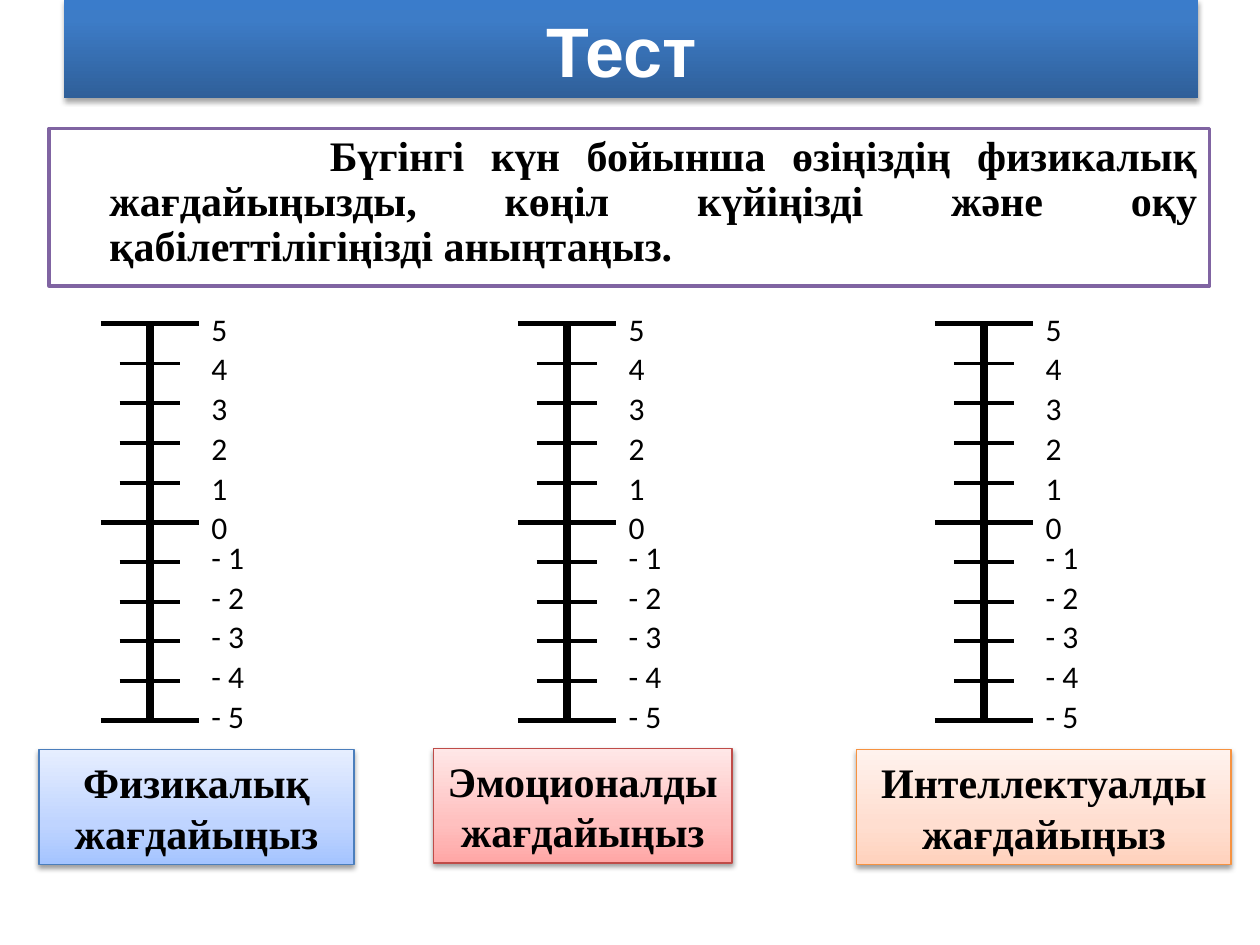
from lxml.etree import SubElement
from pptx import Presentation
from pptx.dml.color import RGBColor
from pptx.enum.shapes import MSO_CONNECTOR as CONNECTOR, MSO_SHAPE as SHAPE
from pptx.enum.text import MSO_ANCHOR as ANCHOR, MSO_AUTO_SIZE as AUTO_SIZE, PP_ALIGN as ALIGN
from pptx.oxml.ns import qn
from pptx.util import Inches, Pt

BLACK = RGBColor(0x00, 0x00, 0x00)
WHITE = RGBColor(0xFF, 0xFF, 0xFF)
PURPLE = RGBColor(0x80, 0x64, 0xA2)
BLUE = RGBColor(0x4B, 0x7E, 0xBC)
RED = RGBColor(0xBF, 0x4C, 0x48)
ORANGE = RGBColor(0xF6, 0x92, 0x40)
TITLE_STOPS = [(0, RGBColor(0x2F, 0x5F, 0x99)), (80, RGBColor(0x3D, 0x7C, 0xC7)),
               (100, RGBColor(0x3A, 0x7C, 0xCB))]
BLUE_STOPS = [(0, RGBColor(0xA4, 0xC4, 0xFF)), (35, RGBColor(0xBF, 0xD4, 0xFF)),
              (100, RGBColor(0xE6, 0xEE, 0xFF))]
RED_STOPS = [(0, RGBColor(0xFF, 0xA6, 0xA5)), (35, RGBColor(0xFF, 0xC0, 0xBF)),
             (100, RGBColor(0xFF, 0xE7, 0xE7))]
ORANGE_STOPS = [(0, RGBColor(0xFF, 0xD2, 0xBD)), (35, RGBColor(0xFF, 0xDE, 0xD0)),
                (100, RGBColor(0xFF, 0xF2, 0xED))]

SCALE_TOP = 2.57
SCALE_STEP = 0.315
SCALE_MAX = 5
SCALE_CENTERS = (1.19, 4.5, 7.81)

CAPTIONS = [
    (0.31, 5.95, 2.5, "Физикалық жағдайыңыз", BLUE, BLUE_STOPS),
    (6.8, 5.95, 2.97, "Интеллектуалды жағдайыңыз", ORANGE, ORANGE_STOPS),
    (3.44, 5.94, 2.37, "Эмоционалды\nжағдайыңыз", RED, RED_STOPS),
]


def fill_gradient(shape, stops):
    shape.fill.gradient()
    shape.fill.gradient_angle = 90
    stop_list = shape._element.spPr.find(qn("a:gradFill")).find(qn("a:gsLst"))
    for stop in list(stop_list):
        stop_list.remove(stop)
    for percent, color in stops:
        stop = SubElement(stop_list, qn("a:gs"), pos=str(percent * 1000))
        SubElement(stop, qn("a:srgbClr"), val=str(color))


def add_shadow(shape, opacity, distance):
    shape.shadow.inherit = False
    effects = shape._element.spPr.find(qn("a:effectLst"))
    shadow = SubElement(effects, qn("a:outerShdw"), blurRad=str(Pt(3.1)),
                        dist=str(Pt(distance)), dir="5400000", rotWithShape="0")
    color = SubElement(shadow, qn("a:srgbClr"), val=str(BLACK))
    SubElement(color, qn("a:alpha"), val=str(opacity * 1000))


def write_text(shape, text, font_name, size, color=BLACK, bold=False, align=ALIGN.LEFT):
    shape.text_frame.text = text
    for paragraph in shape.text_frame.paragraphs:
        paragraph.alignment = align
        for run in paragraph.runs:
            run.font.name = font_name
            run.font.size = Pt(size)
            run.font.bold = bold
            run.font.color.rgb = color


def add_title(slide):
    title = slide.shapes.title
    title.left, title.top = Inches(0.51), Inches(0)
    title.width, title.height = Inches(9), Inches(0.78)
    fill_gradient(title, TITLE_STOPS)
    add_shadow(title, 35, 1.8)
    write_text(title, "Тест ", "Arial", 40, WHITE, True, ALIGN.CENTER)
    title.text_frame.vertical_anchor = ANCHOR.MIDDLE


def add_instruction(slide):
    instruction = slide.shapes.add_shape(
        SHAPE.RECTANGLE, Inches(0.39), Inches(1.02), Inches(9.21), Inches(1.25))
    instruction.shadow.inherit = False
    instruction.fill.solid()
    instruction.fill.fore_color.rgb = WHITE
    instruction.line.color.rgb = PURPLE
    instruction.line.width = Pt(2)
    write_text(instruction, "Бүгінгі күн бойынша өзіңіздің физикалық жағдайыңызды, "
               "көңіл күйіңізді және оқу қабілеттілігіңізді аныңтаңыз.",
               "Times New Roman", 24, bold=True, align=ALIGN.JUSTIFY)
    instruction.text_frame.vertical_anchor = ANCHOR.TOP
    paragraph = instruction.text_frame.paragraphs[0]
    paragraph.line_spacing = 0.9
    properties = paragraph._p.get_or_add_pPr()
    properties.set("marL", str(Inches(0.38)))
    properties.set("indent", str(Inches(1.75)))


def add_caption(slide, left, top, width, text, border, stops):
    caption = slide.shapes.add_shape(
        SHAPE.RECTANGLE, Inches(left), Inches(top), Inches(width), Inches(0.91))
    fill_gradient(caption, stops)
    caption.line.color.rgb = border
    caption.line.width = Pt(0.75)
    add_shadow(caption, 38, 1.6)
    write_text(caption, text, "Times New Roman", 24, bold=True, align=ALIGN.CENTER)
    caption.text_frame.word_wrap = "\n" not in text


def add_line(shapes, x1, y1, x2, y2, weight):
    line = shapes.add_connector(
        CONNECTOR.STRAIGHT, Inches(x1), Inches(y1), Inches(x2), Inches(y2))
    line.line.color.rgb = BLACK
    line.line.width = Pt(weight)
    SubElement(line._element.spPr, qn("a:effectLst"))


def add_label(shapes, left, tick_y, value):
    text, width, rise = (f"- {-value}", 0.49, 0.24) if value < 0 else (str(value), 0.34, 0.16)
    label = shapes.add_textbox(
        Inches(left), Inches(tick_y - rise), Inches(width), Inches(0.4))
    write_text(label, text, "Calibri", 18)
    label.text_frame.word_wrap = False
    label.text_frame.auto_size = AUTO_SIZE.SHAPE_TO_FIT_TEXT


def add_scale(slide, center):
    shapes = slide.shapes.add_group_shape().shapes
    bottom = SCALE_TOP + 2 * SCALE_MAX * SCALE_STEP
    add_line(shapes, center, SCALE_TOP, center, bottom, 4.5)
    for value in range(SCALE_MAX, -SCALE_MAX - 1, -1):
        y = SCALE_TOP + (SCALE_MAX - value) * SCALE_STEP
        half, weight = (0.39, 3) if value % SCALE_MAX == 0 else (0.24, 2.25)
        add_line(shapes, center - half, y, center + half, y, weight)
        add_label(shapes, center + 0.39, y, value)


def main():
    presentation = Presentation()
    presentation.slide_width = Inches(10)
    presentation.slide_height = Inches(7.5)
    slide = presentation.slides.add_slide(presentation.slide_layouts[5])
    add_title(slide)
    add_instruction(slide)
    for caption in CAPTIONS:
        add_caption(slide, *caption)
    for center in SCALE_CENTERS:
        add_scale(slide, center)
    presentation.save("out.pptx")


if __name__ == "__main__":
    main()
